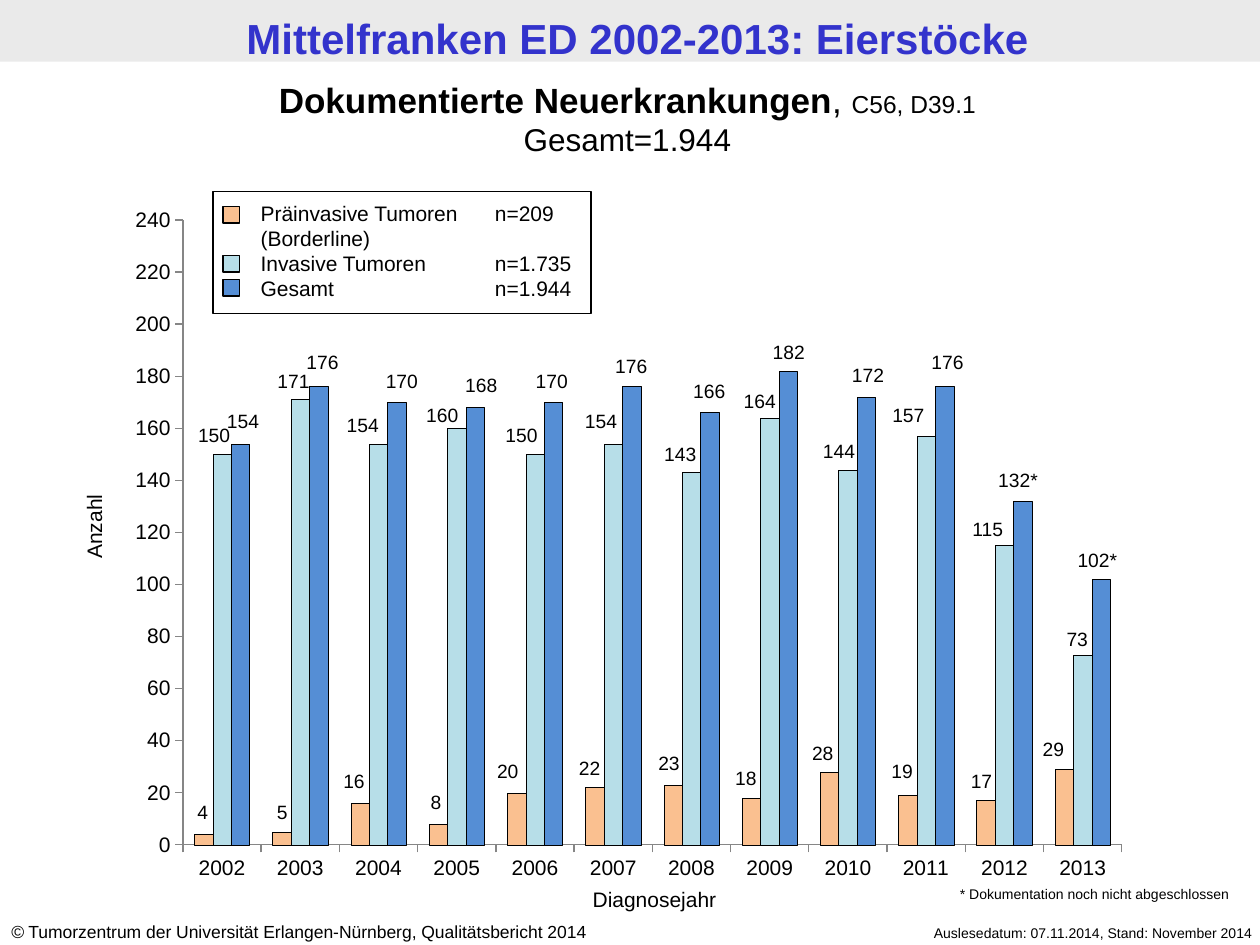
from lxml import etree
from pptx import Presentation
from pptx.chart.data import CategoryChartData
from pptx.dml.color import RGBColor
from pptx.enum.chart import XL_CHART_TYPE, XL_TICK_MARK
from pptx.enum.shapes import MSO_SHAPE
from pptx.enum.text import MSO_ANCHOR, PP_ALIGN
from pptx.oxml import parse_xml
from pptx.oxml.ns import nsdecls, qn
from pptx.util import Inches, Pt

BLACK, AXIS_GREY = "000000", "868686"
YEARS = [str(year) for year in range(2002, 2014)]
OPEN_YEARS = ("2012", "2013")

# Each series: colour, legend text, values, label width, label centres and label tops
SERIES = [
    {"name": "Präinvasive Tumoren", "color": "FAC090",
     "legend": "Präinvasive Tumoren\tn=209 (Borderline)", "key_top": 0.12,
     "values": [4, 5, 16, 8, 20, 22, 23, 18, 28, 19, 17, 29], "label_width": 0.5,
     "centres": [1.61, 2.24, 2.81, 3.46, 4.03, 4.68, 5.31, 5.92, 6.53, 7.16, 7.79, 8.36],
     "tops": [6.3, 6.3, 6.06, 6.22, 5.98, 5.95, 5.91, 6.03, 5.83, 5.98, 6.06, 5.8]},
    {"name": "Invasive Tumoren", "color": "B7DEE8",
     "legend": "Invasive Tumoren\tn=1.735", "key_top": 0.51,
     "values": [150, 171, 154, 160, 150, 154, 143, 164, 144, 157, 115, 73], "label_width": 0.63,
     "centres": [1.7, 2.33, 2.88, 3.51, 4.14, 4.77, 5.4, 6.03, 6.66, 7.21, 7.84, 8.55],
     "tops": [3.31, 2.88, 3.23, 3.15, 3.31, 3.2, 3.46, 3.04, 3.44, 3.15, 4.06, 4.93]},
    {"name": "Gesamt", "color": "558ED5",
     "legend": "Gesamt\tn=1.944", "key_top": 0.7,
     "values": [154, 176, 170, 168, 170, 176, 166, 182, 172, 176, 132, 102], "label_width": 0.63,
     "centres": [1.93, 2.56, 3.19, 3.82, 4.38, 5.01, 5.63, 6.26, 6.89, 7.52, 8.08, 8.71],
     "tops": [3.2, 2.73, 2.88, 2.91, 2.88, 2.76, 2.96, 2.65, 2.83, 2.73, 3.67, 4.3]},
]


def color(value):
    return RGBColor.from_string(value)


def format_font(font, hue=BLACK, **values):
    for name, value in {"name": "Arial", **values}.items():
        setattr(font, name, value)
    font.color.rgb = color(hue)


def write_spans(para, spans, align=PP_ALIGN.LEFT):
    para.alignment = align
    for text, values in spans:
        span = para.add_run()
        span.text = text
        format_font(span.font, **values)


def add_text(page, box, lines, align=PP_ALIGN.LEFT):
    """Place a text box; each line is a list of (text, format) spans."""
    shape = page.shapes.add_textbox(*map(Inches, box))
    frame = shape.text_frame
    frame.word_wrap = True
    for number, spans in enumerate(lines):
        para = frame.add_paragraph() if number else frame.paragraphs[0]
        write_spans(para, spans, align)
    return shape


def add_rectangle(page, box, fill=None, line=None):
    shape = page.shapes.add_shape(MSO_SHAPE.RECTANGLE, *map(Inches, box))
    shape.shadow.inherit = False
    if fill:
        shape.fill.solid()
        shape.fill.fore_color.rgb = color(fill)
    else:
        shape.fill.background()
    if line:
        shape.line.color.rgb = color(line)
        shape.line.width = Pt(0.75)
    else:
        shape.line.fill.background()


def add_header(page, box):
    left, top, width, height = box
    add_rectangle(page, box, fill="EAEAEA")
    title = page.shapes.title
    places = {"left": left + 0.06, "top": top + 0.05, "width": width, "height": height}
    for name, value in places.items():
        setattr(title, name, Inches(value))
    title.text_frame.vertical_anchor = MSO_ANCHOR.TOP
    write_spans(title.text_frame.paragraphs[0],
                [("Mittelfranken ED 2002-2013: Eierstöcke",
                  {"size": Pt(24), "bold": True, "hue": "3333CC"})], PP_ALIGN.CENTER)
    # Bring the title in front of the band
    page.shapes._spTree.append(title._element)


def add_subtitle(page, box):
    add_text(page, box, [
        [("Dokumentierte Neuerkrankungen", {"size": Pt(20), "bold": True}),
         (", ", {"size": Pt(20)}), ("C56, D39.1", {"size": Pt(14)})],
        [("Gesamt=1.944", {"size": Pt(18)})]], PP_ALIGN.CENTER)


def set_plot_area(chart, left, top, width, height):
    """Fix the inner plot area as fractions of the chart and fill it white."""
    area = chart._chartSpace.chart.plotArea
    for old in area.findall(qn("c:layout")):
        area.remove(old)
    layout = parse_xml(f"<c:layout {nsdecls('c')}/>")
    manual = etree.SubElement(layout, qn("c:manualLayout"))
    settings = {"layoutTarget": "inner", "xMode": "edge", "yMode": "edge",
                "x": left, "y": top, "w": width, "h": height}
    for name, value in settings.items():
        etree.SubElement(manual, qn(f"c:{name}")).set("val", str(value))
    area.insert(0, layout)
    area.append(parse_xml(
        f"<c:spPr {nsdecls('c', 'a')}><a:solidFill><a:srgbClr val='FFFFFF'/></a:solidFill></c:spPr>"))


def add_column_chart(page, box):
    data = CategoryChartData()
    data.categories = YEARS
    for series in SERIES:
        data.add_series(series["name"], series["values"])
    chart = page.shapes.add_chart(
        XL_CHART_TYPE.COLUMN_CLUSTERED, *map(Inches, box), data).chart
    chart.has_legend = chart.has_title = False
    format_font(chart.font, name="Calibri", size=Pt(18))
    plot = chart.plots[0]
    plot.gap_width, plot.overlap, plot.vary_by_categories = 124, 0, False
    for column, series in zip(plot.series, SERIES):
        column.format.fill.solid()
        column.format.fill.fore_color.rgb = color(series["color"])
        column.format.line.color.rgb = color(BLACK)
        column.format.line.width = Pt(0.25)
    for axis in (chart.category_axis, chart.value_axis):
        axis.has_major_gridlines = False
        axis.major_tick_mark = XL_TICK_MARK.OUTSIDE
        axis.format.line.color.rgb = color(AXIS_GREY)
        format_font(axis.tick_labels.font, size=Pt(12))
    scale = {"minimum_scale": 0, "maximum_scale": 240, "major_unit": 20}
    for name, value in scale.items():
        setattr(chart.value_axis, name, value)
    set_plot_area(chart, 0.0664, 0.0353, 0.9133, 0.8937)


def add_axis_titles(page, category_box, value_box):
    style = {"size": Pt(12)}
    add_text(page, category_box, [[("Diagnosejahr", style)]], PP_ALIGN.CENTER)
    add_text(page, value_box, [[("Anzahl", style)]], PP_ALIGN.CENTER).rotation = 270


def add_legend(page, box):
    left, top, width, height = box
    shape = add_text(page, (left + 0.28, top + 0.02, 2.73, 0.91), [[] for _ in SERIES])
    for para, series in zip(shape.text_frame.paragraphs, SERIES):
        tabs = etree.SubElement(para._p.get_or_add_pPr(), qn("a:tabLst"))
        etree.SubElement(tabs, qn("a:tab"), pos=str(Inches(1.86)), algn="l")
        write_spans(para, [(series["legend"], {"size": Pt(12)})])
    add_rectangle(page, box, line=BLACK)
    for series in SERIES:
        add_rectangle(page, (left + 0.08, top + series["key_top"], 0.13, 0.13),
                      series["color"], BLACK)


def add_value_labels(page):
    for series in SERIES:
        width = series["label_width"]
        for year, value, centre, top in zip(
                YEARS, series["values"], series["centres"], series["tops"]):
            star = "*" if series["name"] == "Gesamt" and year in OPEN_YEARS else ""
            add_text(page, (centre - width / 2, top, width, 0.29),
                     [[(f"{value}{star}", {"size": Pt(11)})]], PP_ALIGN.CENTER)


def add_footer(page, source_box, date_box, note_box):
    add_text(page, source_box, [[
        ("©", {"size": Pt(10), "italic": True}),
        (" Tumorzentrum der Universität Erlangen-Nürnberg, Qualitätsbericht 2014", {"size": Pt(10)})]])
    small = {"size": Pt(8)}
    add_text(page, date_box, [[("Auslesedatum: 07.11.2014, Stand: November 2014", small)]],
             PP_ALIGN.RIGHT)
    add_text(page, note_box, [[("* Dokumentation noch nicht abgeschlossen", small)]])


def main():
    deck = Presentation()
    deck.slide_width, deck.slide_height = Inches(10), Inches(7.5)
    page = deck.slides.add_slide(deck.slide_layouts[5])
    add_header(page, (0, 0, 10, 0.49))
    add_column_chart(page, (0.91, 1.55, 8.16, 5.55))
    add_subtitle(page, (-0.04, 0.57, 10.04, 0.74))
    add_axis_titles(page, (3.66, 6.99, 3.07, 0.3), (-0.56, 4.03, 2.61, 0.3))
    add_legend(page, (1.69, 1.52, 3, 0.97))
    add_value_labels(page)
    add_footer(page, (-0.01, 7.26, 5.24, 0.27), (6.65, 7.29, 3.39, 0.24), (7.52, 6.98, 2.7, 0.24))
    deck.save("out.pptx")


if __name__ == "__main__":
    main()
